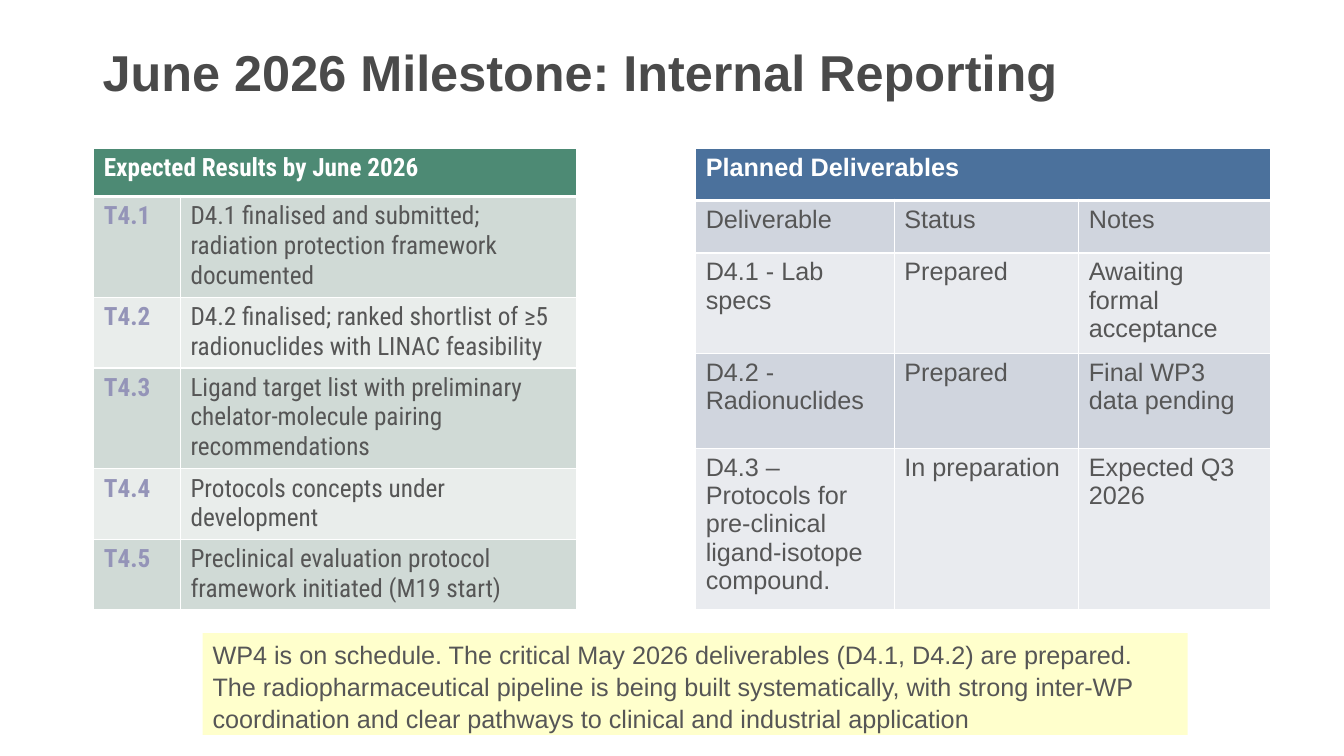
from dataclasses import dataclass

from lxml import etree
from pptx import Presentation
from pptx.dml.color import RGBColor
from pptx.enum import shapes, text
from pptx.oxml import ns
from pptx.util import Inches, Pt


@dataclass(frozen=True)
class Theme:
    title: str = "4A4A4A"
    body: str = "565656"
    task: str = "9494B8"
    white: str = "FFFFFF"
    green: str = "4D8A74"
    green_bands: tuple = ("D0DAD6", "E9EDEB")
    blue: str = "4B719C"
    blue_bands: tuple = ("D0D5DE", "E9EBEF")
    highlight: str = "FFFF00"
    sans: str = "Arial"
    condensed: str = "Roboto Condensed"
    title_size: int = 36
    body_size: int = 18


theme = Theme()


def write(frame, words, font, color, size=theme.body_size, bold=False):
    run = frame.paragraphs[0].add_run()
    run.text = words
    run.font.name = font
    run.font.size = Pt(size)
    run.font.bold = bold
    run.font.color.rgb = RGBColor.from_string(color)


def style_cell(cell, fill, bottom=1):
    """Fill a cell and draw its white borders, widths in points."""
    props = cell._tc.get_or_add_tcPr()
    for side, width in (("L", 1), ("R", 1), ("T", 1), ("B", bottom)):
        line = etree.SubElement(props, ns.qn(f"a:ln{side}"), w=str(Pt(width)))
        solid = etree.SubElement(line, ns.qn("a:solidFill"))
        etree.SubElement(solid, ns.qn("a:srgbClr"), val=theme.white)
    cell.fill.solid()
    cell.fill.fore_color.rgb = RGBColor.from_string(fill)


deck = Presentation()
deck.slide_width, deck.slide_height = Inches(13.33), Inches(7.5)
slide = deck.slides.add_slide(deck.slide_layouts[6])

heading = slide.shapes.add_textbox(Inches(0.92), Inches(0.37), Inches(11.95), Inches(0.75)).text_frame
heading.word_wrap = True
heading.vertical_anchor = text.MSO_ANCHOR.MIDDLE
heading.paragraphs[0].line_spacing = 0.9
write(heading, "June 2026 Milestone: Internal Reporting", theme.sans, theme.title, theme.title_size, True)

results = [
    ("T4.1", "D4.1 finalised and submitted; radiation protection framework documented"),
    ("T4.2", "D4.2 finalised; ranked shortlist of ≥5 radionuclides with LINAC feasibility"),
    ("T4.3", "Ligand target list with preliminary chelator-molecule pairing recommendations"),
    ("T4.4", "Protocols concepts under development"),
    ("T4.5", "Preclinical evaluation protocol framework initiated (M19 start)"),
]
deliverables = [
    ("Deliverable", "Status", "Notes"),
    ("D4.1 - Lab specs", "Prepared", "Awaiting formal acceptance"),
    ("D4.2 - Radionuclides", "Prepared", "Final WP3 data pending"),
    ("D4.3 – Protocols for pre-clinical ligand-isotope compound.", "In preparation", "Expected Q3 2026"),
]

# header, rows, left, column widths, row heights, font, header fill, bands, first column colour
panels = [
    ("Expected Results by June 2026", results, 0.93, (0.86, 3.93), (0.48, 0.98, 0.69, 0.98, 0.69, 0.69),
     theme.condensed, theme.green, theme.green_bands, theme.task),
    ("Planned Deliverables", deliverables, 6.9, (1.97, 1.83, 1.9), (0.52, 0.52, 0.94, 0.94, 1.51),
     theme.sans, theme.blue, theme.blue_bands, theme.body),
]
for header, rows, left, widths, heights, font, header_fill, bands, first_color in panels:
    grid = slide.shapes.add_table(len(heights), len(widths), Inches(left), Inches(1.47),
                                  Inches(sum(widths)), Inches(sum(heights))).table
    for column, width in zip(grid.columns, widths):
        column.width = Inches(width)
    for row, height in zip(grid.rows, heights):
        row.height = Inches(height)

    grid.cell(0, 0).merge(grid.cell(0, len(widths) - 1))
    for c in range(len(widths)):
        style_cell(grid.cell(0, c), header_fill, bottom=3)
    write(grid.cell(0, 0).text_frame, header, font, theme.white, bold=True)

    for r, entries in enumerate(rows):
        for c, entry in enumerate(entries):
            cell = grid.cell(r + 1, c)
            style_cell(cell, bands[r % 2])
            color = first_color if c == 0 else theme.body
            write(cell.text_frame, entry, font, color, bold=color == theme.task)

summary = slide.shapes.add_shape(shapes.MSO_SHAPE.RECTANGLE, Inches(2.01), Inches(6.28), Inches(9.77), Inches(1.01))
summary.shadow.inherit = False
summary.line.fill.background()
summary.fill.solid()
summary.fill.fore_color.rgb = RGBColor.from_string(theme.highlight)
tint = summary._element.spPr.find(ns.qn("a:solidFill"))[0]
etree.SubElement(tint, ns.qn("a:alpha"), val="20000")
message = summary.text_frame
message.word_wrap = True
message.vertical_anchor = text.MSO_ANCHOR.TOP
message.paragraphs[0].alignment = text.PP_ALIGN.LEFT
message.paragraphs[0].line_spacing = 1.05
write(message, "WP4 is on schedule. The critical May 2026 deliverables (D4.1, D4.2) are prepared. "
      "The radiopharmaceutical pipeline is being built systematically, with strong inter-WP "
      "coordination and clear pathways to clinical and industrial application", theme.sans, theme.body)

deck.save("out.pptx")
